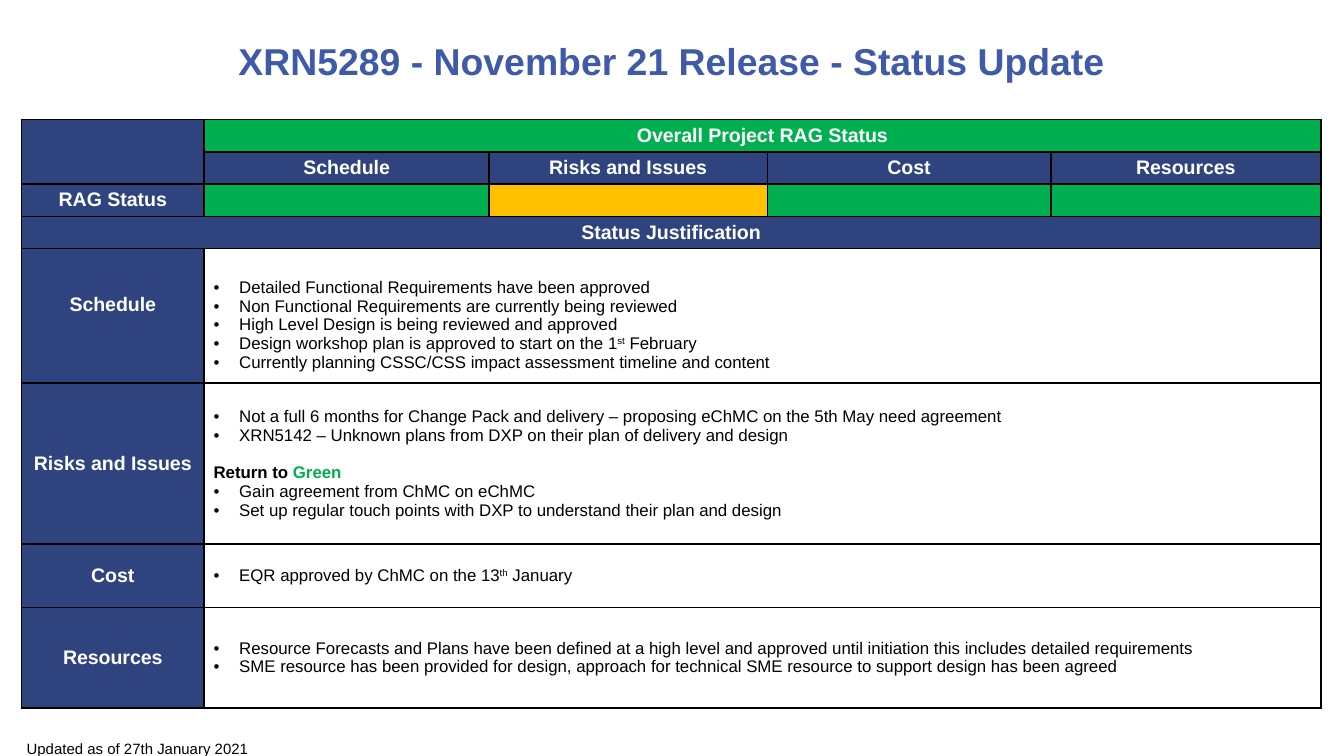
from dataclasses import dataclass

from lxml import etree
from pptx import Presentation
from pptx.dml.color import RGBColor
from pptx.enum.text import MSO_ANCHOR, PP_ALIGN
from pptx.oxml.ns import qn
from pptx.util import Inches, Pt

CENTER, LEFT = PP_ALIGN.CENTER, PP_ALIGN.LEFT
MIDDLE, TOP = MSO_ANCHOR.MIDDLE, MSO_ANCHOR.TOP
SLIDE_WIDTH = 10
SLIDE_HEIGHT = SLIDE_WIDTH * 9 / 16
FONT = "Arial"
NAVY, GREEN, AMBER = "2F447E", "00B050", "FFC000"
WHITE, BLACK, TITLE_BLUE = "FFFFFF", "000000", "3E5AA8"
HEADING_SIZE, BODY_SIZE = 10.5, 9
COLUMN_WIDTHS = (1.36, 2.12, 2.07, 2.11, 2.01)
HEADER_HEIGHTS = (0.24,) * 4
LAST_COLUMN = len(COLUMN_WIDTHS) - 1
SIDE_MARGIN, END_MARGIN, INDENT = 0.07, 0.03, 0.19


@dataclass(frozen=True)
class Span:
    text: str
    size: float = BODY_SIZE
    color: str = BLACK
    bold: bool = False
    superscript: bool = False


@dataclass(frozen=True)
class Line:
    spans: tuple[Span, ...]
    bullet: bool = True
    space_before: float = 0


@dataclass(frozen=True)
class Area:
    name: str
    rag: str
    height: float
    lines: tuple[Line, ...]
    label_lift: float = 0
    body_drop: float = 0


def bullet(text: str, ordinal: str = "", rest: str = "") -> Line:
    spans = (Span(text),)
    if ordinal:
        spans += (Span(ordinal, superscript=True), Span(rest))
    return Line(spans)


AREAS = (
    Area("Schedule", GREEN, 1, (
        bullet("Detailed Functional Requirements have been approved"),
        bullet("Non Functional Requirements are currently being reviewed"),
        bullet("High Level Design is being reviewed and approved"),
        bullet("Design workshop plan is approved to start on the 1", "st", " February"),
        bullet("Currently planning CSSC/CSS impact assessment timeline and content"),
    ), label_lift=0.16, body_drop=0.14),
    Area("Risks and Issues", AMBER, 1.2, (
        bullet("Not a full 6 months for Change Pack and delivery – proposing eChMC on the 5th May need agreement"),
        bullet("XRN5142 – Unknown plans from DXP on their plan of delivery and design"),
        Line((Span("Return to ", bold=True), Span("Green", color=GREEN, bold=True)),
             bullet=False, space_before=10),
        bullet("Gain agreement from ChMC on eChMC"),
        bullet("Set up regular touch points with DXP to understand their plan and design"),
    )),
    Area("Cost", GREEN, 0.47, (
        bullet("EQR approved by ChMC on the 13", "th", " January"),
    )),
    Area("Resources", GREEN, 0.75, (
        bullet("Resource Forecasts and Plans have been defined at a high level and approved until initiation this includes detailed requirements"),
        bullet("SME resource has been provided for design, approach for technical SME resource to support design has been agreed"),
    )),
)


def color_of(value: str) -> RGBColor:
    return RGBColor.from_string(value)


def add_span(paragraph, span: Span) -> None:
    run = paragraph.add_run()
    run.text = span.text
    run.font.name = FONT
    run.font.size = Pt(span.size)
    run.font.bold = span.bold
    run.font.color.rgb = color_of(span.color)
    if span.superscript:
        run._r.get_or_add_rPr().set("baseline", "30000")


def write_lines(frame, lines: tuple[Line, ...], alignment=LEFT) -> None:
    for index, line in enumerate(lines):
        paragraph = frame.add_paragraph() if index else frame.paragraphs[0]
        paragraph.alignment = alignment
        if line.space_before:
            paragraph.space_before = Pt(line.space_before)
        if line.bullet:
            properties = paragraph._p.get_or_add_pPr()
            properties.set("marL", str(Inches(INDENT)))
            properties.set("indent", str(-Inches(INDENT)))
            etree.SubElement(properties, qn("a:buFont"), typeface=FONT)
            etree.SubElement(properties, qn("a:buChar"), char="•")
        for span in line.spans:
            add_span(paragraph, span)


def add_text(slide, left: float, top: float, width: float, height: float,
             span: Span, alignment=LEFT, anchor=TOP) -> None:
    shape = slide.shapes.add_textbox(
        Inches(left * SLIDE_WIDTH), Inches(top * SLIDE_HEIGHT),
        Inches(width * SLIDE_WIDTH), Inches(height * SLIDE_HEIGHT))
    shape.text_frame.word_wrap = True
    shape.text_frame.vertical_anchor = anchor
    write_lines(shape.text_frame, (Line((span,), bullet=False),), alignment)


def style_cell(cell, fill: str) -> None:
    cell.margin_left = cell.margin_right = Inches(SIDE_MARGIN)
    cell.margin_top = cell.margin_bottom = Inches(END_MARGIN)
    cell.vertical_anchor = MIDDLE
    properties = cell._tc.get_or_add_tcPr()
    for side in ("lnL", "lnR", "lnT", "lnB"):
        border = etree.SubElement(properties, qn(f"a:{side}"), w=str(Pt(1)))
        border_fill = etree.SubElement(border, qn("a:solidFill"))
        etree.SubElement(border_fill, qn("a:srgbClr"), val=BLACK)
    cell.fill.solid()
    cell.fill.fore_color.rgb = color_of(fill)


def write_heading(cell, text: str) -> None:
    heading = Span(text, HEADING_SIZE, WHITE, bold=True)
    write_lines(cell.text_frame, (Line((heading,), bullet=False),), CENTER)


def add_status_table(slide) -> None:
    heights = HEADER_HEIGHTS + tuple(area.height for area in AREAS)
    table = slide.shapes.add_table(
        len(heights), len(COLUMN_WIDTHS), Inches(0.16), Inches(0.89),
        Inches(sum(COLUMN_WIDTHS)), Inches(sum(heights))).table
    table.first_row = table.horz_banding = False
    for column, width in zip(table.columns, COLUMN_WIDTHS):
        column.width = Inches(width)
    for row, height in zip(table.rows, heights):
        row.height = Inches(height)

    first_area_row = len(HEADER_HEIGHTS)
    fills = {(0, column): GREEN for column in range(1, LAST_COLUMN + 1)}
    for index, area in enumerate(AREAS):
        fills[2, index + 1] = area.rag
        for column in range(1, LAST_COLUMN + 1):
            fills[first_area_row + index, column] = WHITE
    for row in range(len(heights)):
        for column in range(LAST_COLUMN + 1):
            style_cell(table.cell(row, column), fills.get((row, column), NAVY))

    table.cell(0, 0).merge(table.cell(1, 0))
    table.cell(0, 1).merge(table.cell(0, LAST_COLUMN))
    table.cell(3, 0).merge(table.cell(3, LAST_COLUMN))
    write_heading(table.cell(0, 1), "Overall Project RAG Status")
    write_heading(table.cell(2, 0), "RAG Status")
    write_heading(table.cell(3, 0), "Status Justification")

    for index, area in enumerate(AREAS):
        row = first_area_row + index
        write_heading(table.cell(1, index + 1), area.name)
        label, body = table.cell(row, 0), table.cell(row, 1)
        label.margin_bottom = Inches(END_MARGIN + area.label_lift)
        write_heading(label, area.name)
        body.merge(table.cell(row, LAST_COLUMN))
        body.margin_top = Inches(END_MARGIN + area.body_drop)
        write_lines(body.text_frame, area.lines)

    for cell in table.iter_cells():
        if not cell.text_frame.text:
            paragraph = cell.text_frame.paragraphs[0]
            etree.SubElement(paragraph._p, qn("a:endParaRPr"), sz=str(BODY_SIZE * 100))


def main() -> None:
    presentation = Presentation()
    presentation.slide_width = Inches(SLIDE_WIDTH)
    presentation.slide_height = Inches(SLIDE_HEIGHT)
    slide = presentation.slides.add_slide(presentation.slide_layouts[6])
    title = Span("XRN5289 - November 21 Release - Status Update", 20, TITLE_BLUE, bold=True)
    add_text(slide, 0.05, 0.02, 0.9, 0.12, title, CENTER, MIDDLE)
    add_status_table(slide)
    add_text(slide, 0.01, 0.97, 0.3, 0.04, Span("Updated as of 27th January 2021", 8))
    presentation.save("out.pptx")


if __name__ == "__main__":
    main()
